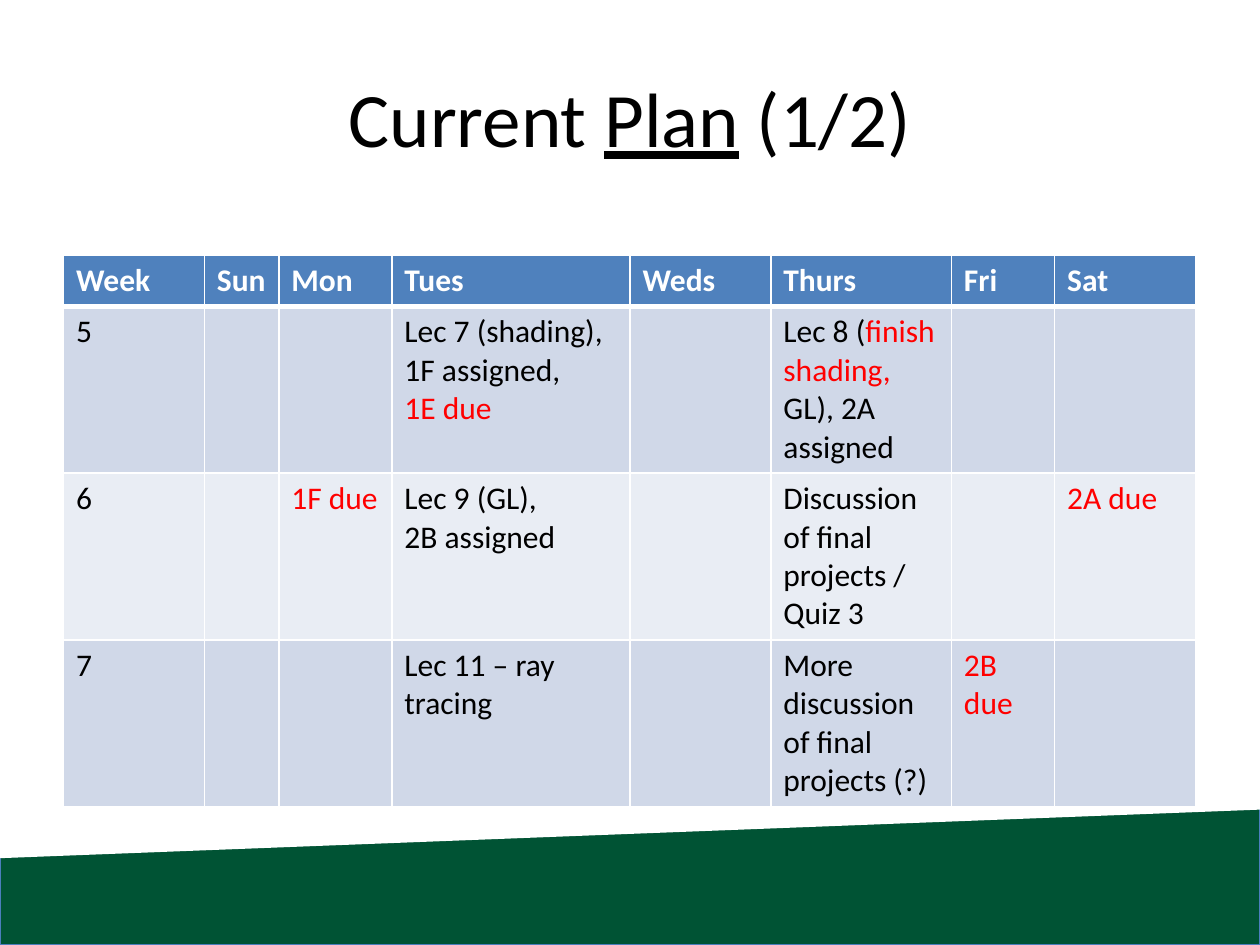
"""Build a course schedule slide with a weekly table above a slanted green footer."""
from lxml.etree import SubElement
from pptx import Presentation
from pptx.dml.color import RGBColor
from pptx.enum.shapes import MSO_SHAPE
from pptx.enum.text import MSO_ANCHOR, PP_ALIGN
from pptx.oxml.ns import qn
from pptx.util import Cm, Pt

COLORS = {"white": "FFFFFF", "black": "000000", "red": "FF0000", "green": "005334",
          "line": "4B7EBC", "header": "4F81BD", "odd": "D0D8E8", "even": "E9EDF4"}
FONT = "Calibri"
COL_WIDTHS = [2.84, 1.5, 2.28, 4.8, 2.84, 3.64, 2.08, 2.84]
DAYS = ["Week", "Sun", "Mon", "Tues", "Weds", "Thurs", "Fri", "Sat"]
WEEKS = [
    {"Week": [["5"]],
     "Tues": [["Lec 7 (shading),"], ["1F assigned,"], [("1E due", "red")]],
     "Thurs": [["Lec 8 (", ("finish shading, ", "red"), "GL), 2A assigned"]]},
    {"Week": [["6"]],
     "Mon": [[("1F due", "red")]],
     "Tues": [["Lec 9 (GL),"], ["2B assigned"]],
     "Thurs": [["Discussion of final projects / Quiz 3"]],
     "Sat": [[("2A due", "red")]]},
    {"Week": [["7"]],
     "Tues": [["Lec 11 – ray tracing"]],
     "Thurs": [["More discussion of final projects (?)"]],
     "Fri": [[("2B due", "red")]]},
]


def rgb(name):
    return RGBColor.from_string(COLORS[name])


class SlideBuilder:
    def __init__(self, prs):
        self.s = prs.slides.add_slide(prs.slide_layouts[5])

    def run(self, p, text, size, color, bold=False, underline=False):
        r = p.add_run()
        r.text = text
        r.font.name, r.font.size = FONT, Pt(size)
        r.font.bold, r.font.underline = bold, underline
        r.font.color.rgb = rgb(color)

    def shape(self, kind, x, y, w, h, fill, line=None):
        sp = self.s.shapes.add_shape(kind, Cm(x), Cm(y), Cm(w), Cm(h))
        sp.shadow.inherit = False
        sp.fill.solid()
        sp.fill.fore_color.rgb = rgb(fill)
        if line:
            sp.line.color.rgb = rgb(line)
            sp.line.width = Pt(0.75)
        else:
            sp.line.fill.background()
        return sp

    def footer(self):
        self.shape(MSO_SHAPE.RECTANGLE, 0, 14.25, 25.4, 4.8, "green", "line")
        sp = self.shape(MSO_SHAPE.PARALLELOGRAM, 9.75, 1.65, 5.9, 25.4, "white")
        sp.adjustments[0] = 0.166
        sp.rotation = 90
        sp._element.spPr.find(qn("a:xfrm")).set("flipH", "1")

    def title(self, runs):
        sp = self.s.shapes.title
        sp.left, sp.top, sp.width, sp.height = Cm(1.27), Cm(0.76), Cm(22.86), Cm(3.18)
        tf = sp.text_frame
        tf.vertical_anchor = MSO_ANCHOR.MIDDLE
        p = tf.paragraphs[0]
        p.alignment = PP_ALIGN.CENTER
        for text, underline in runs:
            self.run(p, text, 44, "black", underline=underline)

    def border(self, cell, side, width):
        ln = SubElement(cell._tc.get_or_add_tcPr(), qn("a:ln" + side), w=str(Pt(width)))
        fill = SubElement(ln, qn("a:solidFill"))
        SubElement(fill, qn("a:srgbClr"), val=COLORS["white"])

    def cell(self, cell, paragraphs, fill, widths, color="black", bold=False):
        for side, width in widths.items():
            self.border(cell, side, width)
        cell.fill.solid()
        cell.fill.fore_color.rgb = rgb(fill)
        tf = cell.text_frame
        for i, parts in enumerate(paragraphs):
            p = tf.add_paragraph() if i else tf.paragraphs[0]
            for part in parts:
                text, tone = (part, color) if isinstance(part, str) else part
                self.run(p, text, 18, tone, bold)

    def schedule(self):
        table = self.s.shapes.add_table(len(WEEKS) + 1, len(DAYS), Cm(1.28), Cm(5.15),
                                        Cm(sum(COL_WIDTHS)), Cm(11.09)).table
        for col, width in zip(table.columns, COL_WIDTHS):
            col.width = Cm(width)
        for i, row in enumerate(table.rows):
            row.height = Cm(3.36 if i else 1.01)
        for c, day in enumerate(DAYS):
            self.cell(table.cell(0, c), [[day]], "header",
                      {"L": 1, "R": 1, "T": 1, "B": 3}, "white", True)
            for i, week in enumerate(WEEKS, 1):
                self.cell(table.cell(i, c), week.get(day, []), "odd" if i % 2 else "even",
                          {"L": 1, "R": 1, "T": 3 if i == 1 else 1, "B": 1})


def main():
    prs = Presentation()
    prs.slide_width, prs.slide_height = Cm(25.4), Cm(19.05)
    builder = SlideBuilder(prs)
    builder.footer()
    builder.title([("Current ", False), ("Plan", True), (" (1/2)", False)])
    builder.schedule()
    prs.save("out.pptx")


if __name__ == "__main__":
    main()
